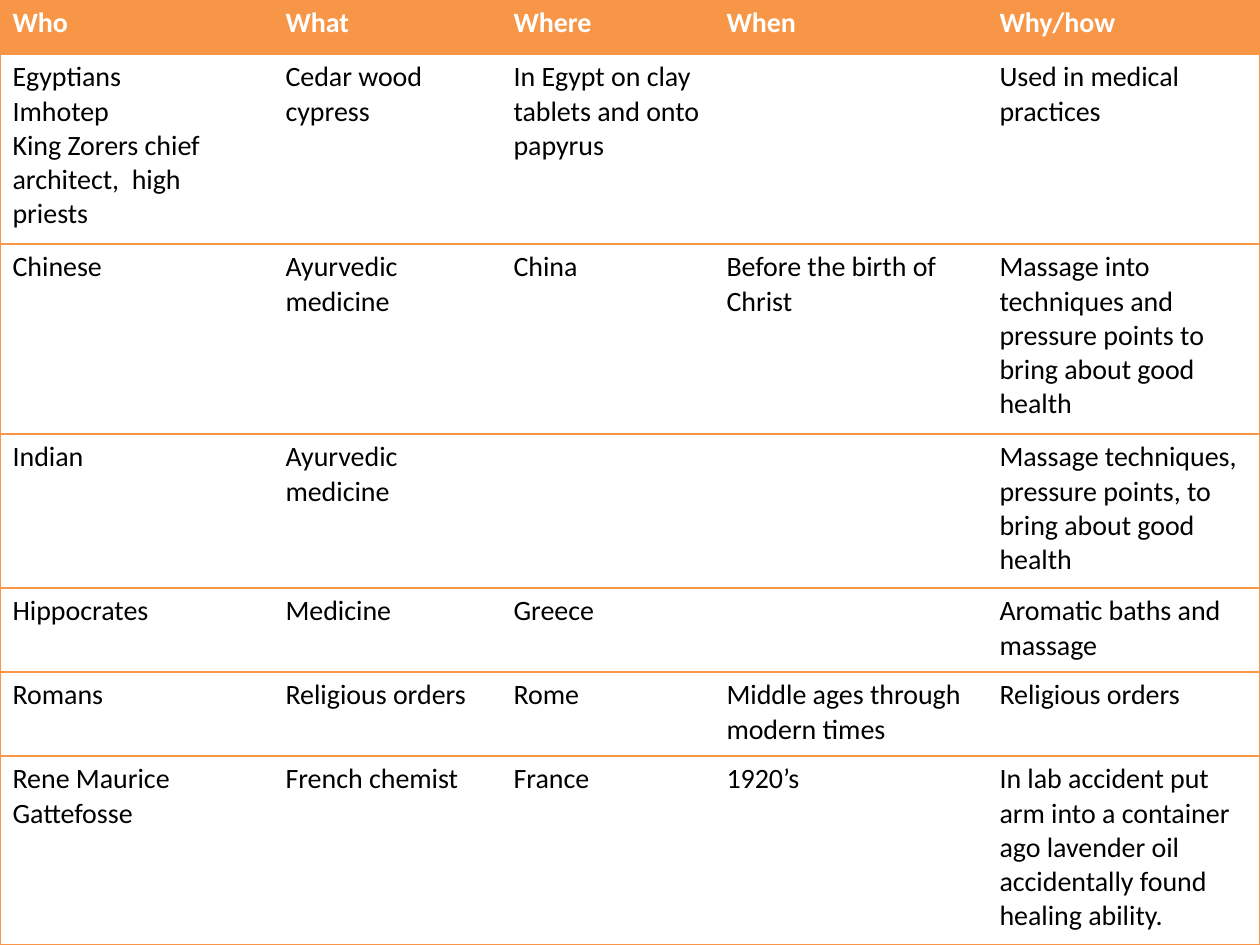
from dataclasses import dataclass

from lxml import etree
from pptx import Presentation
from pptx.dml.color import RGBColor
from pptx.oxml.ns import qn
from pptx.table import Table, _Cell
from pptx.util import Emu, Pt

PX_PER_INCH = 126
NO_GRID_STYLE = "{2D5ABB26-0587-4C30-8999-92F81FD0307C}"


@dataclass(frozen=True)
class Theme:
    accent: str = "F79646"
    paper: str = "FFFFFF"
    ink: str = "000000"
    font: str = "Calibri"
    size: int = 16
    line: int = 1


@dataclass(frozen=True)
class Row:
    height: int
    cells: tuple[str, ...]
    header: bool = False


THEME = Theme()
COLUMNS = (273, 228, 213, 273, 273)
ROWS = (
    Row(54, ("Who", "What", "Where", "When", "Why/how"), header=True),
    Row(190, (
        "Egyptians\nImhotep\nKing Zorers chief architect,  high priests",
        "Cedar wood\ncypress",
        "In Egypt on clay tablets and onto papyrus",
        "",
        "Used in medical practices",
    )),
    Row(190, (
        "Chinese",
        "Ayurvedic\nmedicine",
        "China",
        "Before the birth of Christ",
        "Massage into techniques and pressure points to bring about good health",
    )),
    Row(154, (
        "Indian",
        "Ayurvedic medicine",
        "",
        "",
        "Massage techniques, pressure points, to bring about good health",
    )),
    Row(84, ("Hippocrates", "Medicine", "Greece", "", "Aromatic baths and massage")),
    Row(84, (
        "Romans",
        "Religious orders",
        "Rome",
        "Middle ages through modern times",
        "Religious orders",
    )),
    Row(189, (
        "Rene Maurice Gattefosse",
        "French chemist",
        "France",
        "1920’s",
        "In lab accident put arm into a container ago lavender oil "
        "accidentally found healing ability.",
    )),
)


def px(n: int) -> Emu:
    return Emu(round(n * 914400 / PX_PER_INCH))


def set_borders(cell: _Cell, visible: dict[str, bool]) -> None:
    tc_pr = cell._tc.get_or_add_tcPr()
    for side, shown in visible.items():
        ln = etree.SubElement(tc_pr, qn(f"a:ln{side}"), w=str(Pt(THEME.line)))
        if shown:
            fill = etree.SubElement(ln, qn("a:solidFill"))
            etree.SubElement(fill, qn("a:srgbClr"), val=THEME.accent)
        else:
            etree.SubElement(ln, qn("a:noFill"))


def fill_cell(cell: _Cell, text: str, header: bool) -> None:
    cell.fill.solid()
    cell.fill.fore_color.rgb = RGBColor.from_string(
        THEME.accent if header else THEME.paper
    )
    tf = cell.text_frame
    for i, line in enumerate(text.split("\n")):
        p = tf.paragraphs[0] if i == 0 else tf.add_paragraph()
        p.font.size = Pt(THEME.size)
        if not line:
            continue
        r = p.add_run()
        r.text = line
        r.font.name = THEME.font
        r.font.size = Pt(THEME.size)
        r.font.bold = header
        r.font.color.rgb = RGBColor.from_string(THEME.paper if header else THEME.ink)


def fill_table(table: Table) -> None:
    for column, width in zip(table.columns, COLUMNS):
        column.width = px(width)
    for y, row in enumerate(ROWS):
        table.rows[y].height = px(row.height)
        for x, text in enumerate(row.cells):
            cell = table.cell(y, x)
            set_borders(cell, {
                "L": x == 0, "R": x == len(COLUMNS) - 1, "T": True, "B": True,
            })
            fill_cell(cell, text, row.header)


def main() -> None:
    prs = Presentation()
    prs.slide_width, prs.slide_height = px(1260), px(945)
    s = prs.slides.add_slide(prs.slide_layouts[6])
    frame = s.shapes.add_table(
        len(ROWS), len(COLUMNS), 0, 0,
        px(sum(COLUMNS)), px(sum(row.height for row in ROWS)),
    )
    table = frame.table
    table.horz_banding = False
    table._tbl.tblPr.find(qn("a:tableStyleId")).text = NO_GRID_STYLE
    fill_table(table)
    prs.save("out.pptx")


if __name__ == "__main__":
    main()
